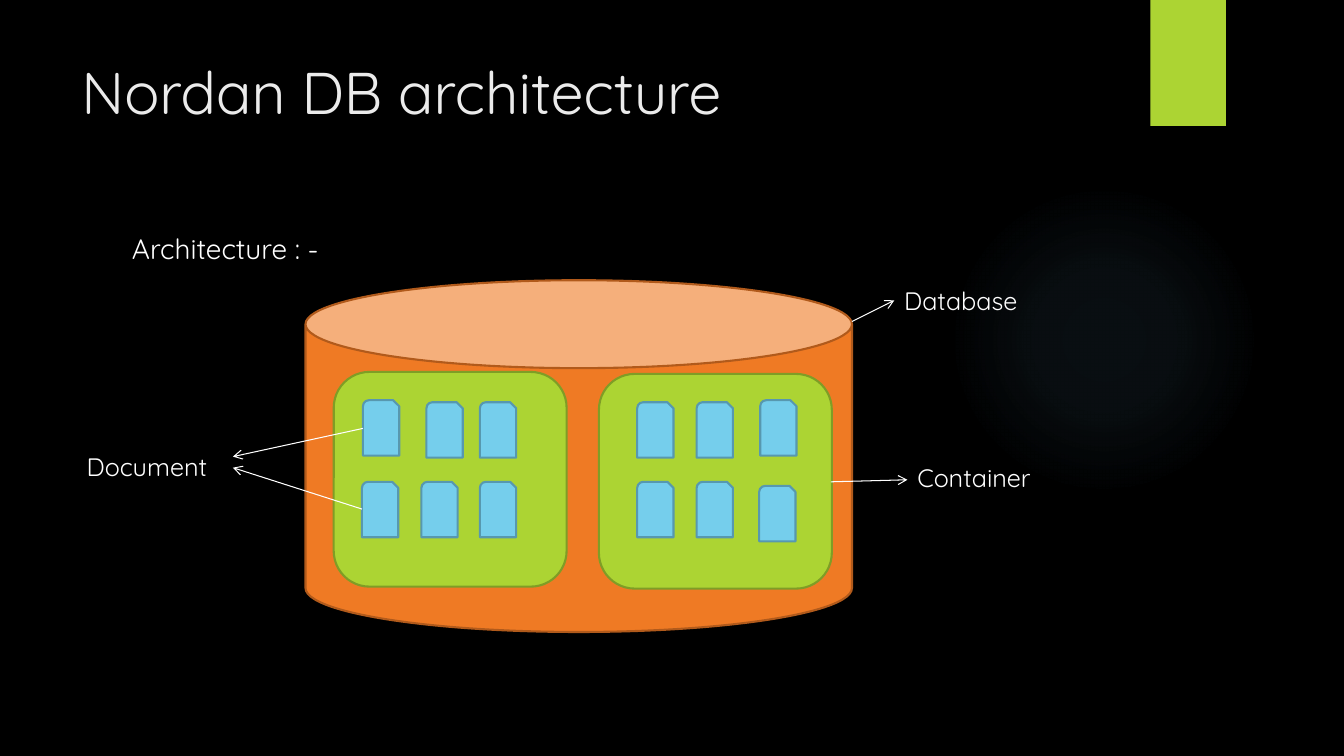
from lxml import etree
from pptx import Presentation
from pptx import util as u
from pptx.dml.color import RGBColor
from pptx.enum import shapes, text
from pptx.oxml import parse_xml
from pptx.oxml.ns import nsdecls, qn

FONT = "Quicksand"
WHITE, LIME, ORANGE, SKY = "FFFFFF", "ACD433", "EF7A24", "75CEEC"
LIME_EDGE, ORANGE_EDGE, SKY_EDGE = "7F9D26", "B15A1B", "5798AF"
DOCUMENT_SIZE = (0.36, 0.55)

# Places of the documents, measured from the corner of their container
LEFT_DOCUMENTS = [(0.29, 0.28), (0.92, 0.3), (1.45, 0.3),
                  (0.28, 1.09), (0.87, 1.09), (1.45, 1.09)]
RIGHT_DOCUMENTS = [(0.38, 0.28), (0.97, 0.28), (1.6, 0.26),
                   (0.38, 1.07), (0.97, 1.07), (1.59, 1.11)]


def color(hex_string):
    return RGBColor.from_string(hex_string)


def add_block(slide, kind, box, fill, edge=None):
    shape = slide.shapes.add_shape(kind, *map(u.Inches, box))
    shape.shadow.inherit = False
    shape.fill.solid()
    shape.fill.fore_color.rgb = color(fill)
    if edge:
        shape.line.color.rgb = color(edge)
        shape.line.width = u.Pt(1.5)
    else:
        shape.line.fill.background()
    return shape


def add_text(slide, box, words, size, hex_string=WHITE):
    frame = slide.shapes.add_textbox(*map(u.Inches, box)).text_frame
    frame.word_wrap = True
    frame.vertical_anchor = text.MSO_ANCHOR.TOP
    run = frame.paragraphs[0].add_run()
    run.text = words
    run.font.name = FONT
    run.font.size = u.Pt(size)
    run.font.color.rgb = color(hex_string)


def add_arrow(slide, start, end):
    arrow = slide.shapes.add_connector(
        shapes.MSO_CONNECTOR.STRAIGHT, *map(u.Inches, start + end))
    arrow.line.color.rgb = color(WHITE)
    arrow.line.width = u.Pt(0.75)
    etree.SubElement(arrow.line._get_or_add_ln(), qn("a:tailEnd"), type="arrow")
    etree.SubElement(arrow._element.spPr, qn("a:effectLst"))


def add_glow(slide, box):
    glow = add_block(slide, shapes.MSO_SHAPE.OVAL, box, "7AC4F0")
    stops = "".join(
        f'<a:gs pos="{position}000"><a:srgbClr val="7AC4F0">'
        f'<a:alpha val="{alpha}000"/></a:srgbClr></a:gs>'
        for position, alpha in ((0, 7), (36, 6), (69, 0)))
    gradient = parse_xml(
        f'<a:gradFill {nsdecls("a")} rotWithShape="1"><a:gsLst>{stops}</a:gsLst>'
        '<a:path path="circle"><a:fillToRect l="50000" t="50000" r="50000" '
        'b="50000"/></a:path></a:gradFill>')
    properties = glow._element.spPr
    properties.replace(properties.find(qn("a:solidFill")), gradient)


def add_backdrop(slide):
    slide.background.fill.solid()
    slide.background.fill.fore_color.rgb = color("000000")
    add_glow(slide, (9.41, 1.83, 3.08, 3.08))
    add_block(slide, shapes.MSO_SHAPE.RECTANGLE, (11.41, 0, 0.75, 1.25), LIME)


def add_container(slide, box, documents):
    left, top = box[:2]
    add_block(slide, shapes.MSO_SHAPE.ROUNDED_RECTANGLE, box, LIME, LIME_EDGE)
    for across, down in documents:
        add_block(slide, shapes.MSO_SHAPE.SNIP_ROUND_RECTANGLE,
                  (left + across, top + down, *DOCUMENT_SIZE), SKY, SKY_EDGE)


def add_database(slide, box):
    left, top = box[:2]
    add_block(slide, shapes.MSO_SHAPE.CAN, box, ORANGE, ORANGE_EDGE)
    add_container(slide, (left + 0.28, top + 0.91, 2.31, 2.13), LEFT_DOCUMENTS)
    add_container(slide, (left + 2.91, top + 0.93, 2.31, 2.13), RIGHT_DOCUMENTS)


def add_label(slide, box, words, arrows):
    add_text(slide, box, words, 18)
    left, top = box[:2]
    for start, (across, down) in arrows:
        add_arrow(slide, start, (left + across, top + down))


def main():
    presentation = Presentation()
    presentation.slide_width = u.Inches(13.33)
    presentation.slide_height = u.Inches(7.5)
    slide = presentation.slides.add_slide(presentation.slide_layouts[6])

    add_backdrop(slide)

    # Headings
    add_text(slide, (0.71, 0.5, 10.29, 1.53), "Nordan DB architecture", 42, "EBEBEB")
    add_text(slide, (1.21, 2.25, 9.78, 4.59), "Architecture : -", 20)

    # Diagram and its labels
    add_database(slide, (3.03, 2.78, 5.42, 3.49))
    add_label(slide, (8.87, 2.78, 1.96, 0.4), "Database",
              [((8.45, 3.19), (0, 0.2))])
    add_label(slide, (9, 4.54, 1.96, 0.4), "Container",
              [((8.24, 4.78), (0, 0.22))])
    add_label(slide, (0.76, 4.43, 1.55, 0.4), "Document",
              [((3.6, 4.25), (1.55, 0.1)), ((3.59, 5.05), (1.55, 0.21))])

    presentation.save("out.pptx")


if __name__ == "__main__":
    main()
